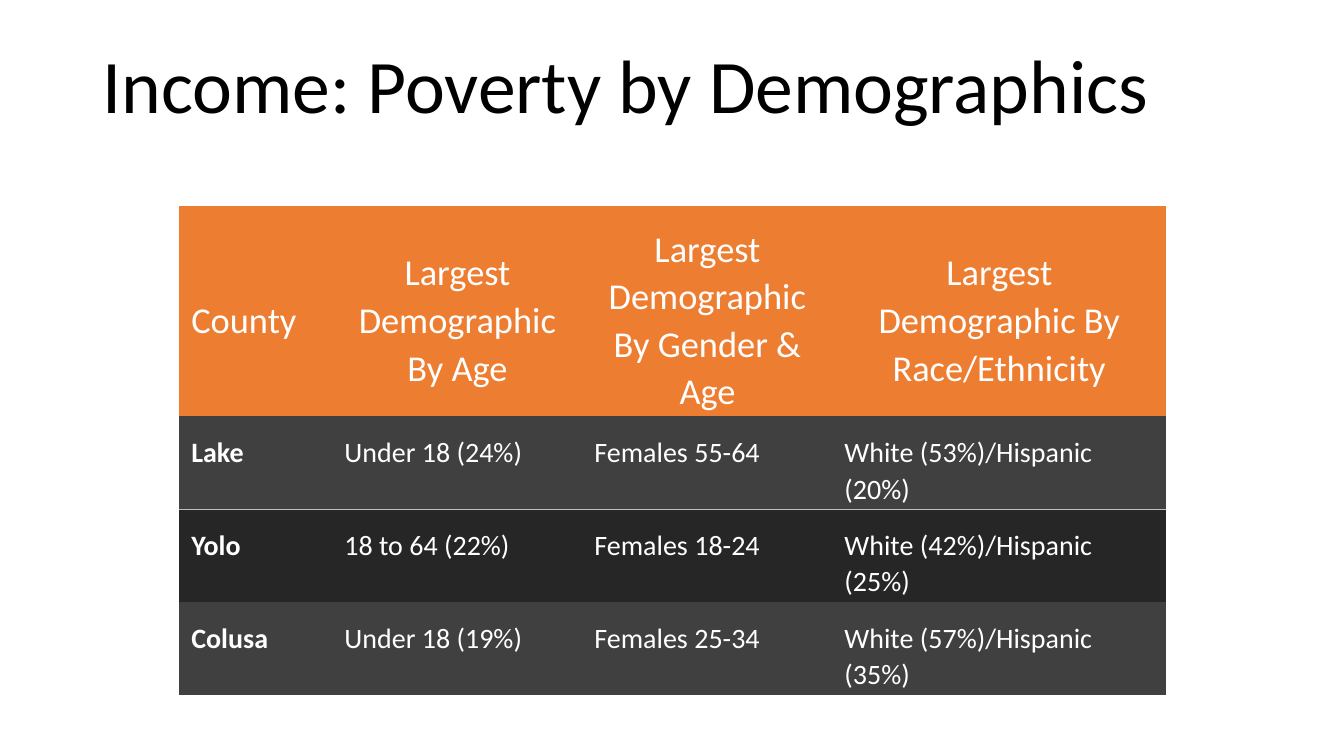
"""Build the slide on poverty by demographics in three counties."""
from dataclasses import dataclass

from lxml import etree
from pptx import Presentation
from pptx.dml.color import RGBColor
from pptx.enum.text import MSO_ANCHOR, MSO_AUTO_SIZE, PP_ALIGN
from pptx.oxml.ns import qn
from pptx.util import Cm, Pt

LEFT, CENTER = PP_ALIGN.LEFT, PP_ALIGN.CENTER
TOP, MIDDLE, BOTTOM = MSO_ANCHOR.TOP, MSO_ANCHOR.MIDDLE, MSO_ANCHOR.BOTTOM
NO_AUTOFIT = MSO_AUTO_SIZE.NONE
TITLE_ONLY = 5

HEADERS = [
    "County",
    "Largest Demographic By Age",
    "Largest Demographic By Gender & Age",
    "Largest Demographic By Race/Ethnicity",
]
COUNTIES = [
    ["Lake", "Under 18 (24%)", "Females 55-64", "White (53%)/Hispanic (20%)"],
    ["Yolo", "18 to 64 (22%)", "Females 18-24", "White (42%)/Hispanic (25%)"],
    ["Colusa", "Under 18 (19%)", "Females 25-34", "White (57%)/Hispanic (35%)"],
]
COLUMN_WIDTHS = [3.86, 6.3, 6.3, 8.41]
HEADER_HEIGHT, COUNTY_HEIGHT = 5.31, 2.34


@dataclass(frozen=True)
class Theme:
    font: str = "Calibri"
    title_color: str = "000000"
    table_text: str = "FFFFFF"
    header_fill: str = "ED7D31"
    row_fills: tuple = ("404040", "262626")
    rule_color: str = "BFBFBF"
    title_size: int = 54
    header_size: int = 26
    body_size: int = 20


class SlideBuilder:
    def __init__(self, slide, theme):
        self.slide = slide
        self.theme = theme

    def format_paragraph(self, paragraph, size, color, spacing, alignment=LEFT, bold=False):
        paragraph.alignment = alignment
        paragraph.line_spacing = spacing
        font = paragraph.font
        font.name = self.theme.font
        font.size = Pt(size)
        font.bold = bold
        font.color.rgb = RGBColor.from_string(color)

    def add_title(self, text, left, top, width, height):
        title = self.slide.shapes.title
        title.left, title.top = Cm(left), Cm(top)
        title.width, title.height = Cm(width), Cm(height)
        frame = title.text_frame
        frame.text = text
        frame.word_wrap = True
        frame.auto_size = NO_AUTOFIT
        frame.vertical_anchor = BOTTOM
        self.format_paragraph(frame.paragraphs[0], self.theme.title_size, self.theme.title_color, 0.9)

    def set_borders(self, cell, ruled_sides):
        properties = cell._tc.get_or_add_tcPr()
        for position, side in enumerate(("lnL", "lnR", "lnT", "lnB")):
            line = etree.Element(qn(f"a:{side}"), w=str(Pt(1)))
            if side in ruled_sides:
                fill = etree.SubElement(line, qn("a:solidFill"))
                etree.SubElement(fill, qn("a:srgbClr"), val=self.theme.rule_color)
            else:
                etree.SubElement(line, qn("a:noFill"))
            properties.insert(position, line)

    def fill_cell(self, cell, text, fill, size, anchor, alignment, bold, ruled_sides):
        cell.text = text
        cell.margin_left = cell.margin_right = Cm(0.3)
        cell.margin_top, cell.margin_bottom = Cm(0.43), Cm(0)
        cell.vertical_anchor = anchor
        cell.fill.solid()
        cell.fill.fore_color.rgb = RGBColor.from_string(fill)
        paragraph = cell.text_frame.paragraphs[0]
        self.format_paragraph(paragraph, size, self.theme.table_text, 1.07, alignment, bold)
        self.set_borders(cell, ruled_sides)

    def add_county_table(self, left, top):
        theme = self.theme
        heights = [HEADER_HEIGHT] + [COUNTY_HEIGHT] * len(COUNTIES)
        table = self.slide.shapes.add_table(
            len(heights), len(COLUMN_WIDTHS), Cm(left), Cm(top),
            Cm(sum(COLUMN_WIDTHS)), Cm(sum(heights)),
        ).table
        for column, width in zip(table.columns, COLUMN_WIDTHS):
            column.width = Cm(width)
        for row, height in zip(table.rows, heights):
            row.height = Cm(height)
        for column, header in enumerate(HEADERS):
            alignment = CENTER if column else LEFT
            self.fill_cell(table.cell(0, column), header, theme.header_fill,
                           theme.header_size, MIDDLE, alignment, False, ())
        ruled_sides = {1: ("lnB",), 2: ("lnT",)}
        for row, values in enumerate(COUNTIES, start=1):
            fill = theme.row_fills[(row - 1) % 2]
            for column, value in enumerate(values):
                self.fill_cell(table.cell(row, column), value, fill, theme.body_size,
                               TOP, LEFT, column == 0, ruled_sides.get(row, ()))


def main():
    presentation = Presentation()
    presentation.slide_width, presentation.slide_height = Cm(33.87), Cm(19.05)
    slide = presentation.slides.add_slide(presentation.slide_layouts[TITLE_ONLY])
    builder = SlideBuilder(slide, Theme())
    builder.add_title("Income: Poverty by Demographics", 2.33, 0.81, 29.21, 2.59)
    builder.add_county_table(4.52, 5.18)
    presentation.save("out.pptx")


if __name__ == "__main__":
    main()
